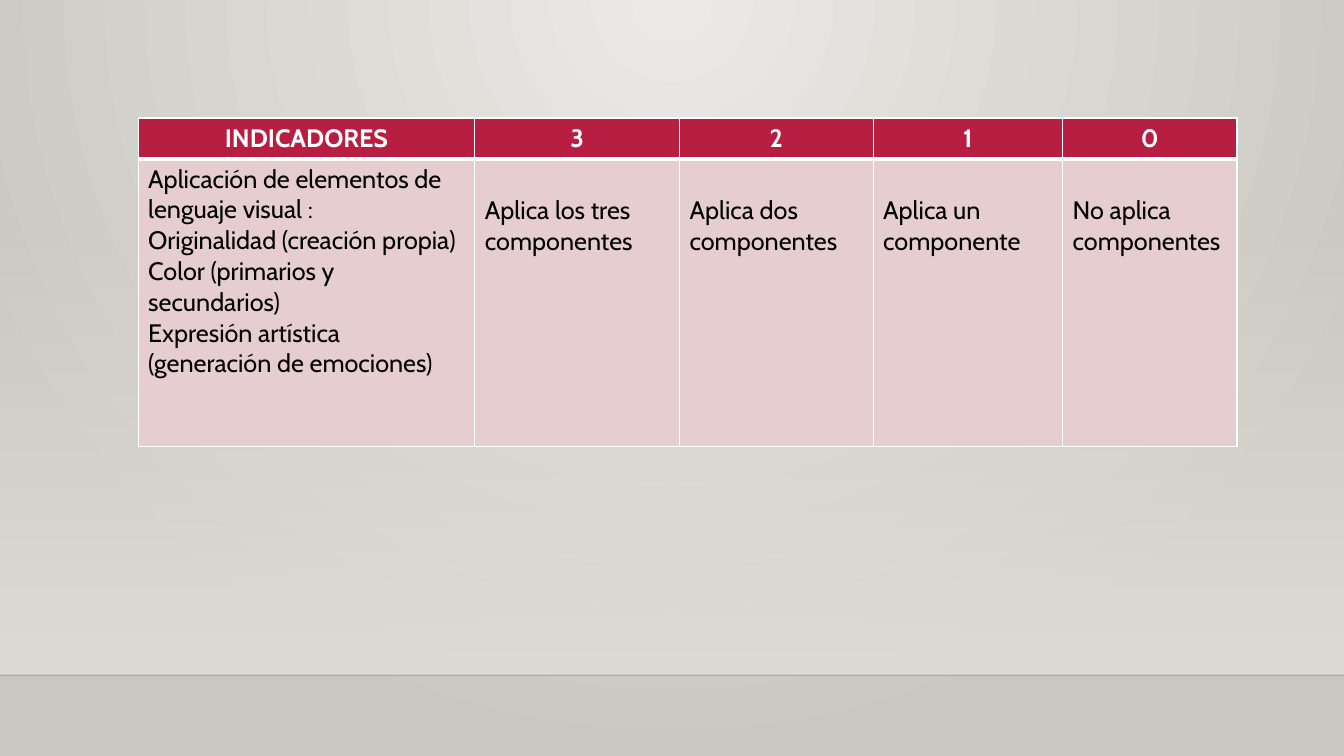
import pptx
import pptx.util
import pptx.dml.color
import pptx.enum.shapes
import pptx.enum.text
import pptx.oxml
import pptx.oxml.ns
import pptx.oxml.xmlchemy

Inches, Pt = pptx.util.Inches, pptx.util.Pt
RGB = pptx.dml.color.RGBColor.from_string
qn = pptx.oxml.ns.qn
make = pptx.oxml.xmlchemy.OxmlElement

COLORS = {
    "glow": "ECEAE7", "edge": "CAC7C1", "wall": "DFDBD5", "floor": "000001",
    "header": "B71E42", "body": "E6CDCF", "white": "FFFFFF", "black": "000000",
}


def write_text(cell, text, color="black", bold=False, align=None):
    """Write one paragraph per line of text."""
    frame = cell.text_frame
    frame.word_wrap = True
    for i, line in enumerate(text.split("\n")):
        paragraph = frame.add_paragraph() if i else frame.paragraphs[0]
        paragraph.alignment = align
        run = paragraph.add_run()
        run.text = line
        run.font.name = "Cabin"
        run.font.size = Pt(18)
        run.font.bold = bold
        run.font.color.rgb = RGB(COLORS[color])


def set_alpha(element, percent):
    """Set the opacity of the first colour inside an element."""
    alpha = make("a:alpha")
    alpha.set("val", str(percent * 1000))
    element.find(".//" + qn("a:srgbClr")).append(alpha)


prs = pptx.Presentation()
prs.slide_width, prs.slide_height = Inches(13.33), Inches(7.5)
slide = prs.slides.add_slide(prs.slide_layouts[6])

# Background: glow spreading from the top centre
backdrop = slide.background.fill
backdrop.gradient()
for stop, name in zip(backdrop.gradient_stops, ("glow", "edge")):
    stop.color.rgb = RGB(COLORS[name])
gradient = slide.element.find(".//" + qn("a:gradFill"))
gradient.remove(gradient.find(qn("a:lin")))
circle = make("a:path")
circle.set("path", "circle")
focus = make("a:fillToRect")
for side, value in zip("ltrb", (43, 0, 43, 100)):
    focus.set(side, str(value * 1000))
circle.append(focus)
gradient.append(circle)

# Wall fading in downwards
wall = slide.shapes.add_shape(pptx.enum.shapes.MSO_SHAPE.RECTANGLE,
                              0, Inches(2.21), prs.slide_width, Inches(4.49))
wall.shadow.inherit = False
wall.line.fill.background()
wall.fill.gradient()
wall.fill.gradient_angle = 270
for stop in wall.fill.gradient_stops:
    stop.color.rgb = RGB(COLORS["wall"])
set_alpha(wall.element.find(".//" + qn("a:gsLst")), 0)

# Floor edge
floor = slide.shapes.add_connector(pptx.enum.shapes.MSO_CONNECTOR.STRAIGHT,
                                   0, Inches(6.7), prs.slide_width, Inches(6.7))
floor.line.width = Pt(1)
floor.line.color.rgb = RGB(COLORS["floor"])
set_alpha(floor.element.spPr, 20)
floor.element.spPr.append(make("a:effectLst"))

# Rubric table
headings = ["INDICADORES", "3", "2", "1", "0"]
criteria = [
    "Aplicación de elementos de lenguaje visual :\n"
    "Originalidad (creación propia)\n"
    "Color (primarios y secundarios)\n"
    "Expresión artística (generación de emociones)",
    "Aplica los tres componentes",
    "Aplica dos componentes",
    "Aplica un componente",
    "No aplica componentes",
]
widths = [3.34, 2.03, 1.92, 1.88, 1.73]
heights = [0.4, 2.85]

rubric = slide.shapes.add_table(2, len(widths), Inches(1.37), Inches(1.17),
                                Inches(sum(widths)), Inches(sum(heights))).table
for column, width in zip(rubric.columns, widths):
    column.width = Inches(width)
for row, height in zip(rubric.rows, heights):
    row.height = Inches(height)

for c, (heading, criterion) in enumerate(zip(headings, criteria)):
    write_text(rubric.cell(0, c), heading, color="white", bold=True,
               align=pptx.enum.text.PP_ALIGN.CENTER)
    write_text(rubric.cell(1, c), criterion)
    if c:  # levels start level with the second line of the indicator
        rubric.cell(1, c).margin_top = Inches(0.36)

    # Borders, heavier between heading and body, then fills
    for r, (fill, heavy) in enumerate((("header", "B"), ("body", "T"))):
        cell = rubric.cell(r, c)
        properties = cell._tc.get_or_add_tcPr()
        for side in "LRTB":
            border = make("a:ln" + side)
            border.set("w", str(Pt(3 if side == heavy else 1)))
            solid = make("a:solidFill")
            white = make("a:srgbClr")
            white.set("val", COLORS["white"])
            solid.append(white)
            border.append(solid)
            properties.append(border)
        cell.fill.solid()
        cell.fill.fore_color.rgb = RGB(COLORS[fill])

prs.save("out.pptx")
